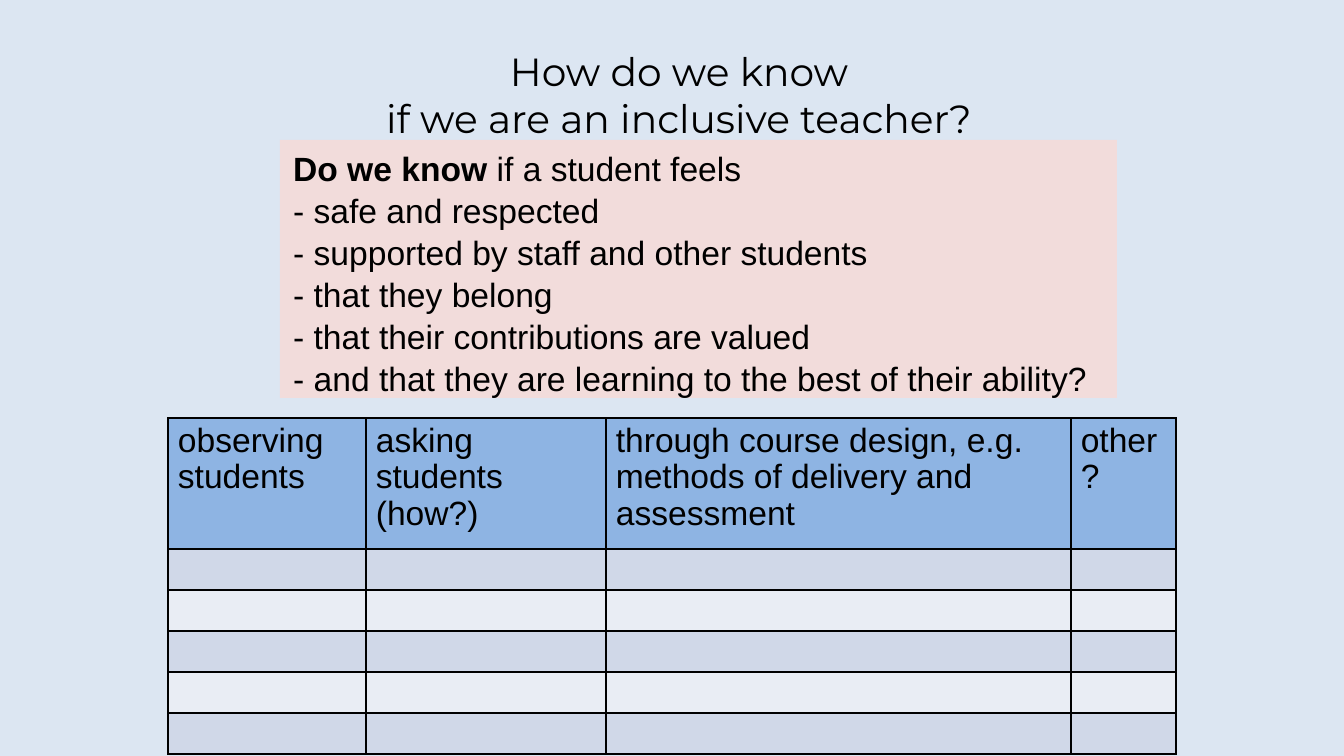
from lxml import etree
from pptx import Presentation
from pptx import util as u
from pptx.dml.color import RGBColor
from pptx.enum import shapes, text
from pptx.oxml.ns import qn

PX = 914400 / 134.4
BLACK = "000000"
TITLE = ["How do we know", "if we are an inclusive teacher?"]
QUESTIONS = [
    [("Do we know ", True), ("if a student feels", False)],
    [("- safe and respected", False)],
    [("- supported by staff and other students", False)],
    [("- that they belong", False)],
    [("- that their contributions are valued", False)],
    [("- and that they are learning to the best of their ability?", False)],
]
METHODS = [
    ("observing students", 198),
    ("asking students (how?)", 240),
    ("through course design, e.g. methods of delivery and assessment", 465),
    ("other ?", 105),
]
ROW_HEIGHTS = [131] + [41] * 5
HEADER_FILL = "8EB4E3"
BAND_FILLS = ["E9EDF4", "D0D8E8"]


def px(*values):
    return [u.Emu(round(value * PX)) for value in values]


def color(value):
    return RGBColor.from_string(value)


def paint(fill, value):
    fill.solid()
    fill.fore_color.rgb = color(value)


def add_run(paragraph, words, size=18, font="Arial", bold=False):
    run = paragraph.add_run()
    run.text = words
    run.font.size = u.Pt(size)
    run.font.name = font
    run.font.bold = bold
    run.font.color.rgb = color(BLACK)


def add_borders(cell):
    properties = cell._tc.get_or_add_tcPr()
    for index, side in enumerate(("lnL", "lnR", "lnT", "lnB")):
        line = etree.Element(qn("a:" + side), w=str(u.Pt(1)))
        fill = etree.SubElement(line, qn("a:solidFill"))
        etree.SubElement(fill, qn("a:srgbClr"), val=BLACK)
        properties.insert(index, line)


def add_title(slide):
    title = slide.shapes.title
    title.left, title.top, title.width, title.height = px(218, 31, 922, 126)
    frame = title.text_frame
    frame.vertical_anchor = text.MSO_ANCHOR.MIDDLE
    paragraph = frame.paragraphs[0]
    paragraph.alignment = text.PP_ALIGN.CENTER
    for index, line in enumerate(TITLE):
        if index:
            paragraph.add_line_break()
        add_run(paragraph, line, 21, "Montserrat")


def add_methods_table(slide):
    widths = [width for _, width in METHODS]
    table = slide.shapes.add_table(
        len(ROW_HEIGHTS), len(METHODS),
        *px(168, 418, sum(widths), sum(ROW_HEIGHTS))).table
    for column, width in zip(table.columns, widths):
        column.width = px(width)[0]
    for index, (row, height) in enumerate(zip(table.rows, ROW_HEIGHTS)):
        row.height = px(height)[0]
        for cell, (label, _) in zip(row.cells, METHODS):
            cell.margin_left, cell.margin_right = px(10, 10)
            cell.margin_top, cell.margin_bottom = px(5, 5)
            paint(cell.fill, BAND_FILLS[index % 2] if index else HEADER_FILL)
            add_borders(cell)
            paragraph = cell.text_frame.paragraphs[0]
            if index == 0:
                paragraph.line_spacing = 0.97
                add_run(paragraph, label)
            else:
                etree.SubElement(paragraph._p, qn("a:endParaRPr"), sz="1200")


def add_questions(slide):
    box = slide.shapes.add_shape(
        shapes.MSO_SHAPE.RECTANGLE, *px(280, 140, 837, 258))
    box.shadow.inherit = False
    paint(box.fill, "F2DCDB")
    box.line.fill.background()
    frame = box.text_frame
    frame.word_wrap = True
    frame.vertical_anchor = text.MSO_ANCHOR.TOP
    for index, runs in enumerate(QUESTIONS):
        paragraph = frame.add_paragraph() if index else frame.paragraphs[0]
        paragraph.alignment = text.PP_ALIGN.LEFT
        paragraph.line_spacing = 1.04
        for words, bold in runs:
            add_run(paragraph, words, bold=bold)


def main():
    presentation = Presentation()
    presentation.slide_width, presentation.slide_height = px(1344, 756)
    slide = presentation.slides.add_slide(presentation.slide_layouts[5])
    paint(slide.background.fill, "DCE6F2")
    add_title(slide)
    add_methods_table(slide)
    add_questions(slide)
    presentation.save("out.pptx")


if __name__ == "__main__":
    main()
